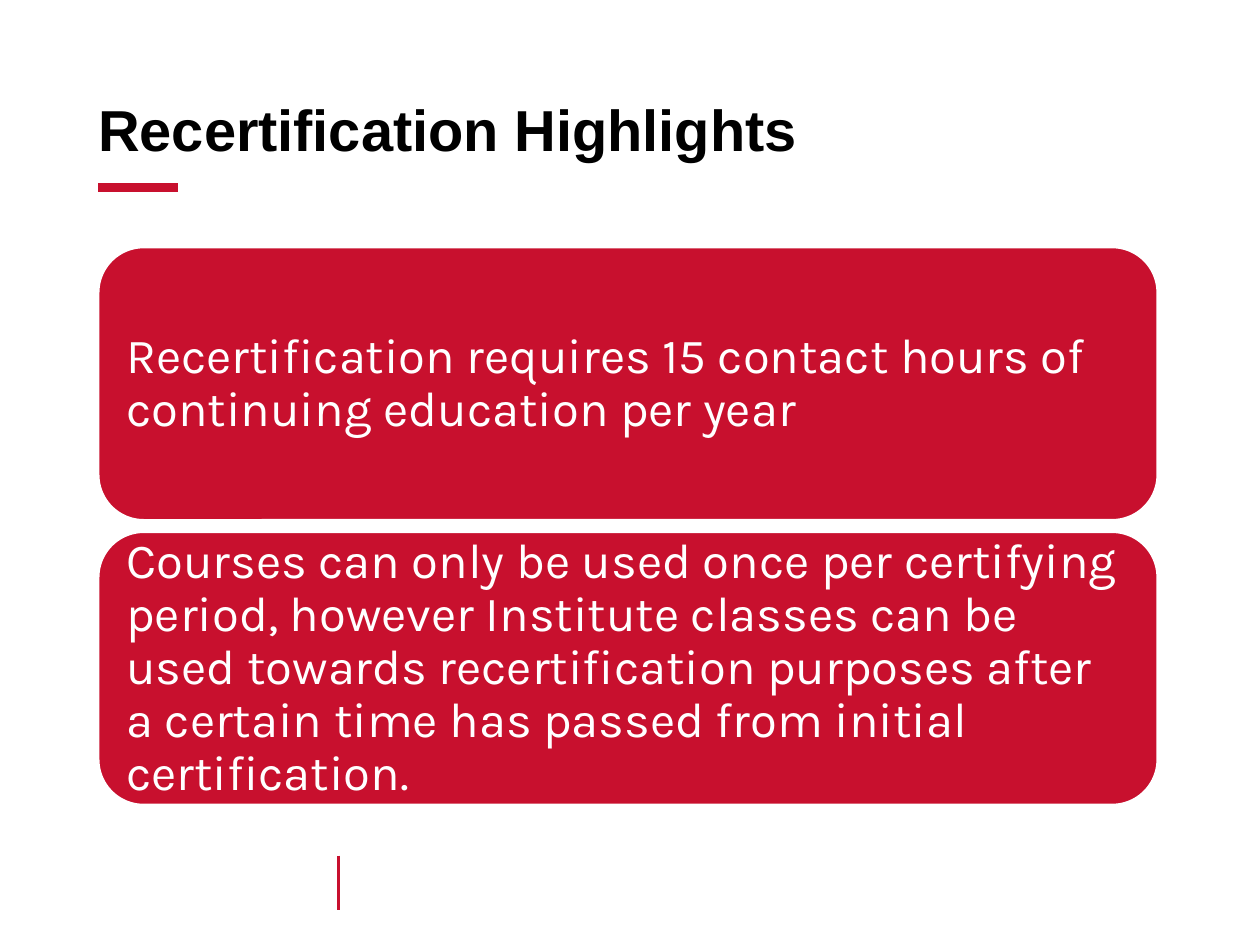
from dataclasses import dataclass

from lxml import etree
from pptx import Presentation
from pptx.dml.color import RGBColor
from pptx.enum import shapes, text
from pptx.oxml import ns
from pptx.util import Cm, Pt

COLORS = {"red": "C8102E", "white": "FFFFFF", "black": "000000"}
LEFT = 1.98
CARD_TOP = 4.98
CARD_WIDTH = 21.36
CARD_HEIGHT = 5.51
CARD_PITCH = 5.74


@dataclass
class Rule:
    x1: float
    y1: float
    x2: float
    y2: float
    weight: float


@dataclass
class TextStyle:
    font: str
    size: float
    color: str
    bold: bool
    inset: float


RULES = [
    Rule(LEFT, 3.78, 3.58, 3.78, 5),
    Rule(6.83, 17.25, 6.83, 18.34, 1.5),
]
TITLE_STYLE = TextStyle("Arial", 33, "black", True, 0)
CARD_STYLE = TextStyle("Karla", 28, "white", False, 0.3)
HIGHLIGHTS = [
    "Recertification requires 15 contact hours of continuing education per year",
    "Courses can only be used once per certifying period, however Institute "
    "classes can be used towards recertification purposes after a certain time "
    "has passed from initial certification.",
]


def rgb(name: str) -> RGBColor:
    return RGBColor.from_string(COLORS[name])


def add_rule(slide, rule: Rule) -> None:
    line = slide.shapes.add_connector(
        shapes.MSO_CONNECTOR.STRAIGHT,
        Cm(rule.x1), Cm(rule.y1), Cm(rule.x2), Cm(rule.y2),
    )
    line.line.color.rgb = rgb("red")
    line.line.width = Pt(rule.weight)
    etree.SubElement(line._element.spPr, ns.qn("a:effectLst"))


def write(sp, content: str, style: TextStyle) -> None:
    tf = sp.text_frame
    tf.word_wrap = True
    tf.vertical_anchor = text.MSO_ANCHOR.MIDDLE
    tf.margin_left = tf.margin_right = Cm(style.inset)
    tf.margin_top = tf.margin_bottom = Cm(style.inset)
    p = tf.paragraphs[0]
    p.text = content
    p.alignment = text.PP_ALIGN.LEFT
    p.line_spacing = 0.9
    p.font.name = style.font
    p.font.size = Pt(style.size)
    p.font.bold = style.bold
    p.font.color.rgb = rgb(style.color)


def add_card(slide, top: float, content: str) -> None:
    sp = slide.shapes.add_shape(
        shapes.MSO_SHAPE.ROUNDED_RECTANGLE,
        Cm(LEFT), Cm(top), Cm(CARD_WIDTH), Cm(CARD_HEIGHT),
    )
    sp.shadow.inherit = False
    sp.fill.solid()
    sp.fill.fore_color.rgb = rgb("red")
    sp.line.color.rgb = rgb("white")
    sp.line.width = Pt(1.5)
    write(sp, content, CARD_STYLE)


def main() -> None:
    prs = Presentation()
    prs.slide_width, prs.slide_height = Cm(25.4), Cm(19.05)
    slide = prs.slides.add_slide(prs.slide_layouts[6])
    for rule in RULES:
        add_rule(slide, rule)
    title = slide.shapes.add_textbox(Cm(LEFT), Cm(1.47), Cm(21.44), Cm(2.41))
    write(title, "Recertification Highlights", TITLE_STYLE)
    for i, highlight in enumerate(HIGHLIGHTS):
        add_card(slide, CARD_TOP + i * CARD_PITCH, highlight)
    prs.save("out.pptx")


if __name__ == "__main__":
    main()
